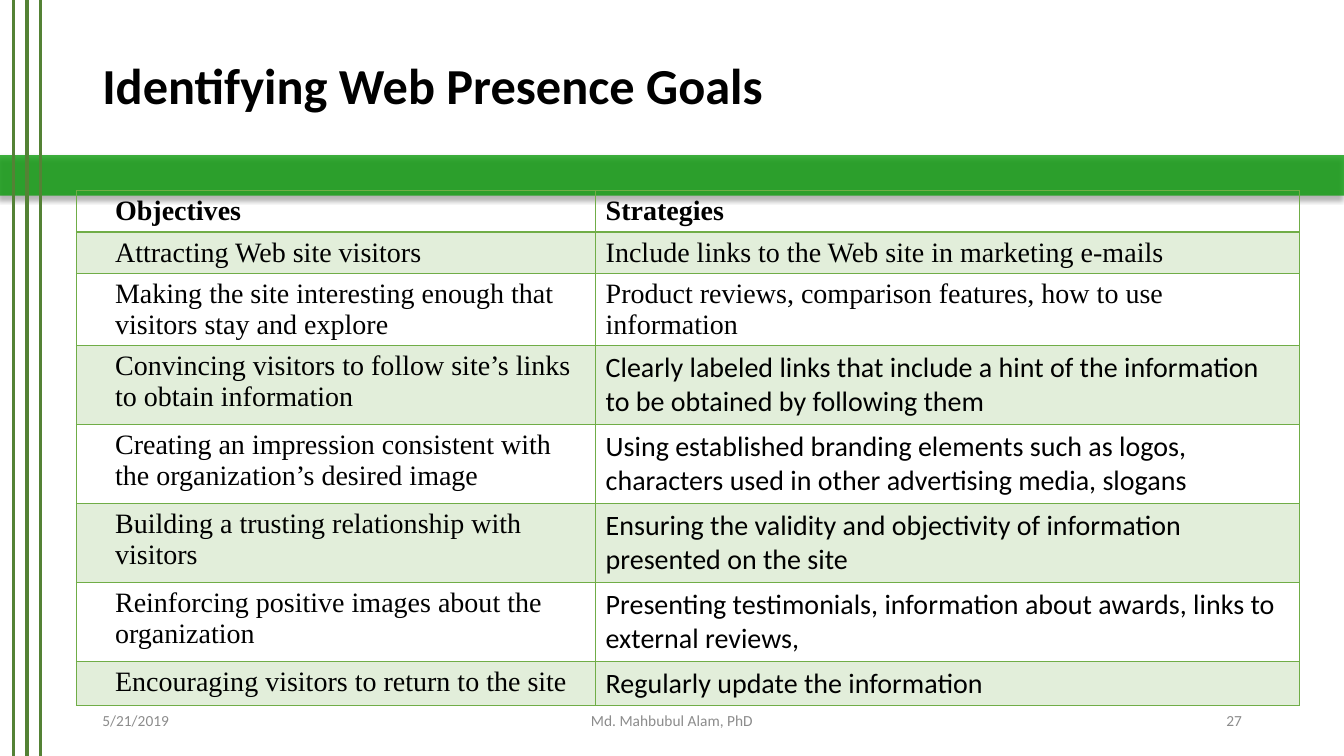
from dataclasses import dataclass

from lxml.etree import SubElement
from pptx import Presentation
from pptx.dml.color import RGBColor
from pptx.enum.shapes import MSO_CONNECTOR, MSO_SHAPE
from pptx.enum.text import MSO_ANCHOR, PP_ALIGN
from pptx.oxml import parse_xml
from pptx.oxml.ns import qn
from pptx.slide import Slide
from pptx.table import _Cell
from pptx.util import Cm, Pt

DRAWING_NS = "http://schemas.openxmlformats.org/drawingml/2006/main"


@dataclass(frozen=True)
class Theme:
    sans: str = "Calibri"
    serif: str = "Times New Roman"
    text: str = "000000"
    muted: str = "8C8C8C"
    band: str = "009900"
    stripe: str = "548235"
    grid: str = "70AD47"
    title_size: int = 36
    table_size: int = 20
    footer_size: int = 11


THEME = Theme()


@dataclass(frozen=True)
class Label:
    text: str
    left: float
    top: float
    width: float
    height: float
    size: int = THEME.footer_size
    color: str = THEME.muted
    bold: bool = False
    align: PP_ALIGN = PP_ALIGN.LEFT
    spacing: float = 1.0


@dataclass(frozen=True)
class Goal:
    objective: str
    strategy: str
    height: float
    strategy_font: str = THEME.sans


PAGE_WIDTH, PAGE_HEIGHT = 33.87, 19.05
COLUMN_WIDTHS = (13.08, 17.73)
STRIPE_STEP = 0.34

LABELS = [
    Label("Identifying Web Presence Goals", 2.33, 1.01, 28.85, 2.42,
          THEME.title_size, THEME.text, bold=True, spacing=0.9),
    Label("5/21/2019", 2.33, 17.66, 7.62, 1.01),
    Label("Md. Mahbubul Alam, PhD", 11.22, 17.66, 11.43, 1.01, align=PP_ALIGN.CENTER),
    Label("27", 29.03, 17.66, 2.52, 1.01, align=PP_ALIGN.RIGHT),
]

# The first row is the table header
GOALS = [
    Goal("Objectives", "Strategies", 1.03, THEME.serif),
    Goal("Attracting Web site visitors",
         "Include links to the Web site in marketing e-mails", 1.03, THEME.serif),
    Goal("Making the site interesting enough that visitors stay and explore",
         "Product reviews, comparison features, how to use information", 1.81, THEME.serif),
    Goal("Convincing visitors to follow site’s links to obtain information",
         "Clearly labeled links that include a hint of the information "
         "to be obtained by following them", 1.99),
    Goal("Creating an impression consistent with the organization’s desired image",
         "Using established branding elements such as logos, "
         "characters used in other advertising media, slogans", 1.99),
    Goal("Building a trusting relationship with visitors",
         "Ensuring the validity and objectivity of information presented on the site", 1.99),
    Goal("Reinforcing positive images about the organization",
         "Presenting testimonials, information about awards, links to external reviews,", 1.99),
    Goal("Encouraging visitors to return to the site", "Regularly update the information", 1.11),
]


def set_alpha(properties, percent: int) -> None:
    """Make the solid fill under these properties partly transparent."""
    color = properties.find(qn("a:solidFill")).find(qn("a:srgbClr"))
    SubElement(color, qn("a:alpha"), val=str(percent * 1000))


def style_font(paragraph, name: str, size: int, color: str, bold: bool) -> None:
    font = paragraph.font
    font.name, font.size, font.bold = name, Pt(size), bold
    font.color.rgb = RGBColor.from_string(color)


def add_band(page: Slide) -> None:
    band = page.shapes.add_shape(MSO_SHAPE.RECTANGLE, 0, Cm(3.91), Cm(PAGE_WIDTH), Cm(1.02))
    band.fill.solid()
    band.fill.fore_color.rgb = RGBColor.from_string(THEME.band)
    band.line.fill.background()
    properties = band._element.spPr
    set_alpha(properties, 75)
    properties.append(parse_xml(
        f'<a:effectLst xmlns:a="{DRAWING_NS}">'
        f'<a:outerShdw blurRad="{Pt(4)}" dist="{Pt(3)}" dir="{135 * 60000}" '
        'algn="tr" rotWithShape="0">'
        '<a:srgbClr val="000000"><a:alpha val="40000"/></a:srgbClr>'
        '</a:outerShdw></a:effectLst>'))


def add_stripe(page: Slide, left: float) -> None:
    stripe = page.shapes.add_connector(
        MSO_CONNECTOR.STRAIGHT, Cm(left), 0, Cm(left), Cm(PAGE_HEIGHT))
    stripe.line.color.rgb = RGBColor.from_string(THEME.stripe)
    stripe.line.width = Pt(2.25)
    SubElement(stripe._element.spPr, qn("a:effectLst"))


def add_label(page: Slide, label: Label) -> None:
    box = page.shapes.add_textbox(
        Cm(label.left), Cm(label.top), Cm(label.width), Cm(label.height))
    frame = box.text_frame
    frame.word_wrap = True
    frame.vertical_anchor = MSO_ANCHOR.MIDDLE
    paragraph = frame.paragraphs[0]
    paragraph.text = label.text
    paragraph.alignment = label.align
    paragraph.line_spacing = label.spacing
    style_font(paragraph, THEME.sans, label.size, label.color, label.bold)


def set_borders(cell: _Cell, top: float, bottom: float) -> None:
    properties = cell._tc.get_or_add_tcPr()
    for side, width in (("L", 1), ("R", 1), ("T", top), ("B", bottom)):
        line = SubElement(properties, qn(f"a:ln{side}"), w=str(Pt(width)))
        fill = SubElement(line, qn("a:solidFill"))
        SubElement(fill, qn("a:srgbClr"), val=THEME.grid)


def fill_cell(cell: _Cell, text: str, font_name: str, row: int) -> None:
    paragraph = cell.text_frame.paragraphs[0]
    paragraph.text = text
    style_font(paragraph, font_name, THEME.table_size, THEME.text, bold=row == 0)
    set_borders(cell, top=2 if row == 1 else 1, bottom=2 if row == 0 else 1)
    if row % 2:
        cell.fill.solid()
        cell.fill.fore_color.rgb = RGBColor.from_string(THEME.grid)
        set_alpha(cell._tc.tcPr, 20)
    else:
        cell.fill.background()


def add_goal_table(page: Slide, goals: list[Goal]) -> None:
    table = page.shapes.add_table(
        len(goals), 2, Cm(1.93), Cm(4.81), Cm(sum(COLUMN_WIDTHS)),
        Cm(sum(goal.height for goal in goals))).table
    table.first_row = table.horz_banding = False
    for column, width in zip(table.columns, COLUMN_WIDTHS):
        column.width = Cm(width)
    for row, goal in enumerate(goals):
        table.rows[row].height = Cm(goal.height)
        objective, strategy = table.rows[row].cells
        objective.margin_left = Cm(0.97)
        fill_cell(objective, goal.objective, THEME.serif, row)
        fill_cell(strategy, goal.strategy, goal.strategy_font, row)


def main() -> None:
    deck = Presentation()
    deck.slide_width, deck.slide_height = Cm(PAGE_WIDTH), Cm(PAGE_HEIGHT)
    page = deck.slides.add_slide(deck.slide_layouts[6])

    # Green band and the stripes down the left edge
    add_band(page)
    for number in range(1, 4):
        add_stripe(page, number * STRIPE_STEP)

    # Table, then title and footer
    add_goal_table(page, GOALS)
    for label in LABELS:
        add_label(page, label)

    deck.save("out.pptx")


if __name__ == "__main__":
    main()
